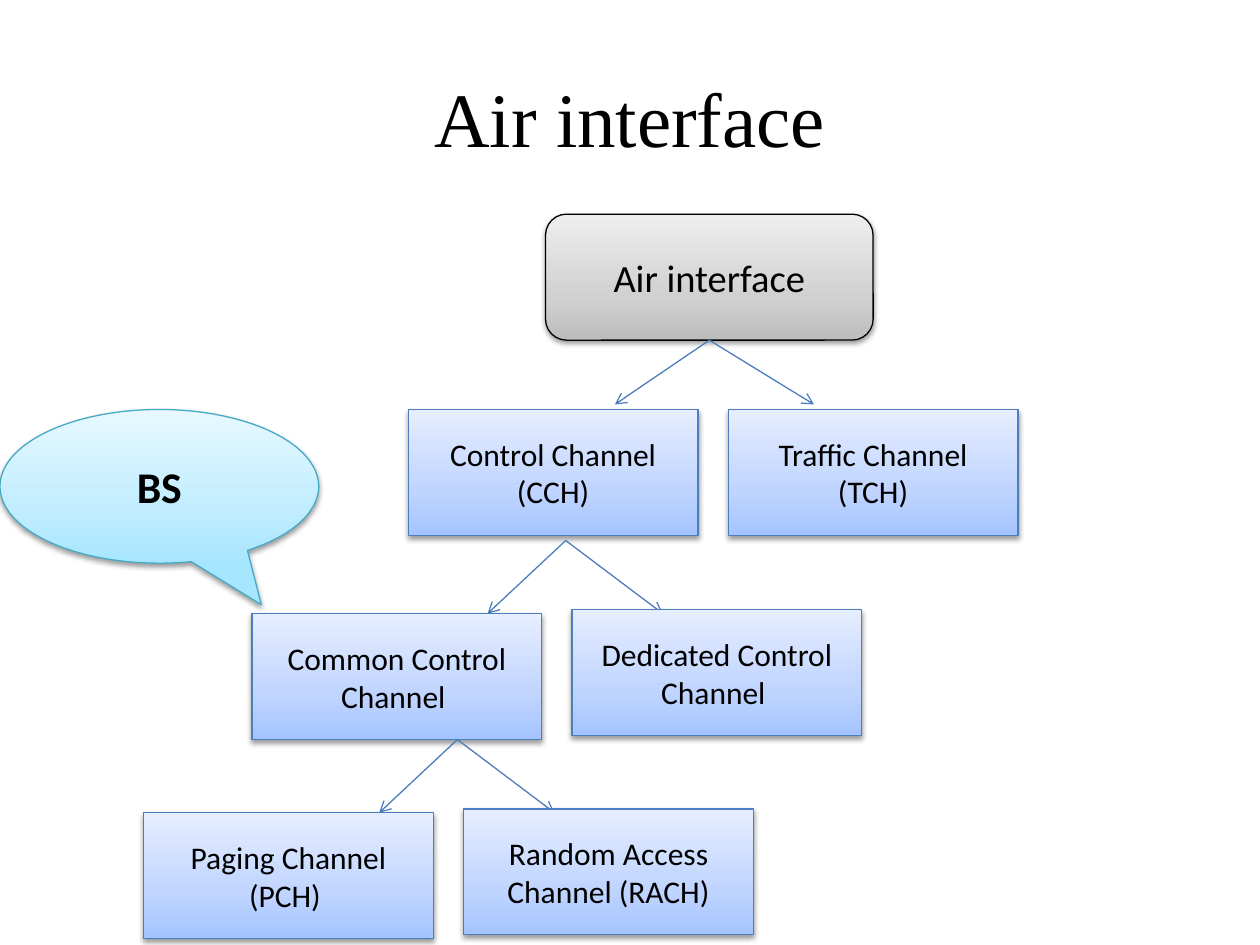
from copy import deepcopy
from dataclasses import dataclass

from lxml.etree import SubElement
from pptx import Presentation
from pptx.dml.color import RGBColor
from pptx.enum.shapes import MSO_CONNECTOR, MSO_SHAPE
from pptx.enum.text import MSO_ANCHOR, PP_ALIGN
from pptx.oxml.ns import qn
from pptx.util import Inches, Pt


@dataclass(frozen=True)
class Theme:
    title_font: str = "Times New Roman"
    body_font: str = "Calibri"
    text: str = "000000"
    arrow: str = "4B7EBC"
    # Each finish: outline, then gradient colours from bottom to top
    grey: tuple = ("000000", "BDBDBD", "D1D1D1", "EEEEEE")
    blue: tuple = ("4B7EBC", "A4C4FF", "BFD4FF", "E6EEFF")
    aqua: tuple = ("46AAC5", "A7E6FF", "C1EDFF", "E7F8FF")
    gradient_positions: tuple = (0, 0.35, 1)
    line_width: float = 0.75
    title_size: int = 44
    root_size: int = 22
    box_size: int = 18
    callout_size: int = 25


class ChannelSlide:
    """Places elements on a grid of 100 columns by 75 rows."""

    def __init__(self, presentation, theme):
        self.theme = theme
        self.column = presentation.slide_width / 100
        self.row = presentation.slide_height / 75
        self.slide = presentation.slides.add_slide(presentation.slide_layouts[6])

    def place(self, *grid):
        """Turn alternating columns and rows into slide lengths."""
        return [round(value * (self.row if index % 2 else self.column))
                for index, value in enumerate(grid)]

    def label(self, shape, text, size, font, bold=False):
        frame = shape.text_frame
        frame.word_wrap = True
        frame.vertical_anchor = MSO_ANCHOR.MIDDLE
        frame.text = text
        paragraph = frame.paragraphs[0]
        paragraph.alignment = PP_ALIGN.CENTER
        for run in paragraph.runs:
            run.font.name = font
            run.font.size = Pt(size)
            run.font.bold = bold
            run.font.color.rgb = RGBColor.from_string(self.theme.text)

    def title(self, text, grid):
        box = self.slide.shapes.add_textbox(*self.place(*grid))
        self.label(box, text, self.theme.title_size, self.theme.title_font)

    def box(self, text, grid, finish, size, kind=MSO_SHAPE.RECTANGLE, bold=False):
        shape = self.slide.shapes.add_shape(kind, *self.place(*grid))
        outline, *colours = finish
        shape.line.color.rgb = RGBColor.from_string(outline)
        shape.line.width = Pt(self.theme.line_width)
        self.shade(shape, colours)
        self.drop_shadow(shape)
        self.label(shape, text, size, self.theme.body_font, bold)
        return shape

    def shade(self, shape, colours):
        shape.fill.gradient()
        shape.fill.gradient_angle = 90
        stop_list = shape.element.spPr.find(".//" + qn("a:gsLst"))
        stop_list.append(deepcopy(stop_list[-1]))
        stops = shape.fill.gradient_stops
        for stop, position, colour in zip(stops, self.theme.gradient_positions, colours):
            stop.position = position
            stop.color.rgb = RGBColor.from_string(colour)

    def drop_shadow(self, shape):
        shape.shadow.inherit = False
        effects = shape.element.spPr.find(qn("a:effectLst"))
        shadow = SubElement(effects, qn("a:outerShdw"), blurRad=str(Pt(3.1)),
                            dist=str(Pt(1.6)), dir="5400000", rotWithShape="0")
        colour = SubElement(shadow, qn("a:srgbClr"), val=self.theme.text)
        SubElement(colour, qn("a:alpha"), val="38000")

    def arrow(self, start, end, source=None):
        connector = self.slide.shapes.add_connector(
            MSO_CONNECTOR.STRAIGHT, *self.place(*start, *end))
        if source is not None:
            connector.begin_connect(source, 2)
        connector.line.color.rgb = RGBColor.from_string(self.theme.arrow)
        connector.line.width = Pt(self.theme.line_width)
        properties = connector.element.spPr
        SubElement(properties.find(qn("a:ln")), qn("a:tailEnd"), type="arrow")
        SubElement(properties, qn("a:effectLst"))

    def branch(self, labels, corner, lift, start, reach, drop, source=None):
        """Two arrows from one point, then the pair of boxes below them."""
        for sideways in reach:
            self.arrow(start, (start[0] + sideways, start[1] + drop), source)
        left, top = corner
        for index, text in enumerate(labels):
            self.box(text, (left + index * 25.4, top - index * lift, 23, 10),
                     self.theme.blue, self.theme.box_size)


def main():
    presentation = Presentation()
    presentation.slide_width, presentation.slide_height = Inches(10), Inches(7.5)
    theme = Theme()
    page = ChannelSlide(presentation, theme)

    # Title and root of the tree
    page.title("Air interface", (5, 3, 90, 12.5))
    root = page.box("Air interface", (43.3, 17, 26, 10), theme.grey,
                    theme.root_size, MSO_SHAPE.ROUNDED_RECTANGLE)

    # Channel levels, top to bottom
    page.branch(("Control Channel (CCH)", "Traffic Channel (TCH)"),
                (32.4, 32.5), 0, (56.3, 27), (-7.5, 8.3), 5.1, root)
    page.branch(("Common Control Channel ", "Dedicated Control Channel "),
                (20, 48.7), 0.3, (44.9, 42.9), (-6.2, 7.7), 5.8)
    page.branch(("Paging Channel (PCH) ", "Random Access Channel (RACH)"),
                (11.4, 64.5), 0.3, (36.3, 58.7), (-6.2, 7.7), 5.8)

    # Base station callout
    callout = page.box("BS", (0, 32.5, 25.3, 12.2), theme.aqua, theme.callout_size,
                       MSO_SHAPE.OVAL_CALLOUT, bold=True)
    callout.adjustments[0], callout.adjustments[1] = 0.32, 0.77

    presentation.save("out.pptx")


if __name__ == "__main__":
    main()
